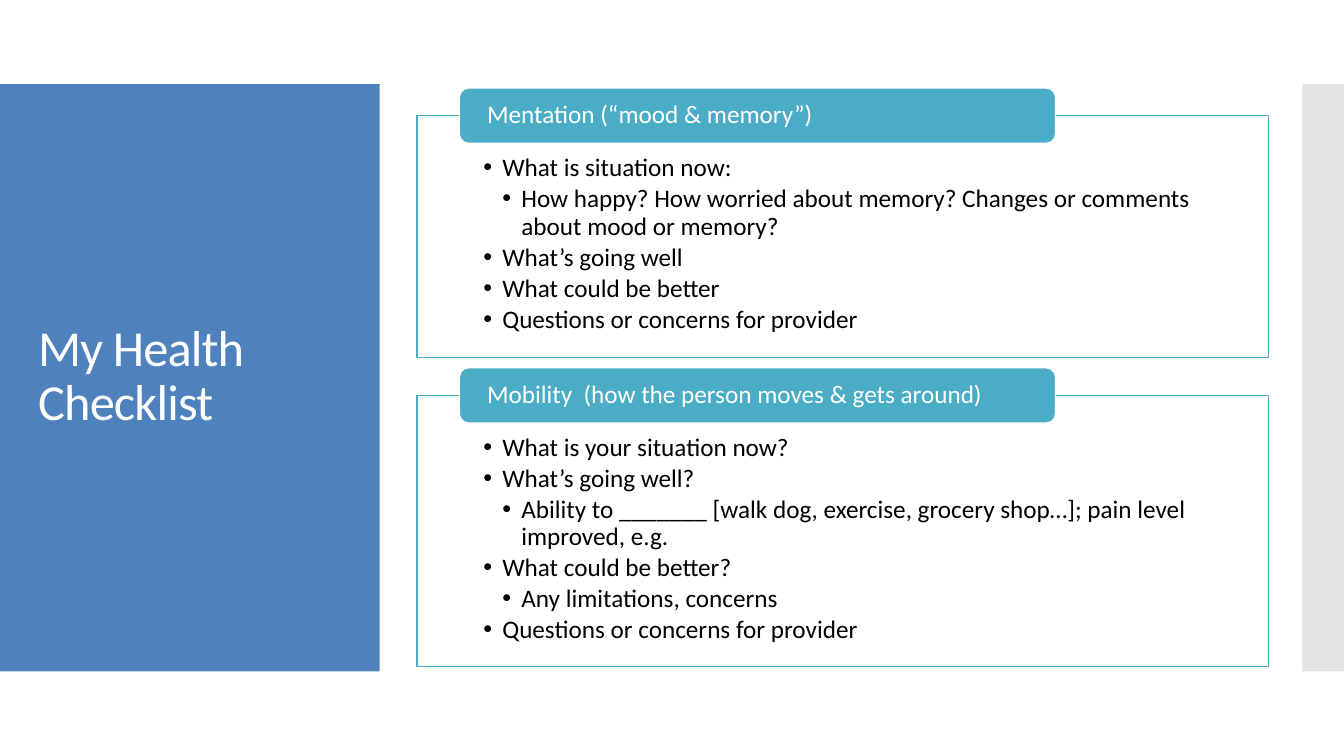
import pptx
import pptx.util
import pptx.dml.color
import pptx.enum.shapes
import pptx.enum.text
import pptx.oxml.ns
from lxml import etree

Cm = pptx.util.Cm
Pt = pptx.util.Pt
Shape = pptx.enum.shapes.MSO_SHAPE
Anchor = pptx.enum.text.MSO_ANCHOR
qn = pptx.oxml.ns.qn

COLORS = {"blue": "4F81BD", "teal": "4BACC6", "gray": "C8C8C8",
          "white": "FFFFFF", "black": "000000"}
INDENT = 0.48

CARDS = [
    ("Mentation (“mood & memory”)", 6.1, [
        (1, "What is situation now:"),
        (2, "How happy? How worried about memory? "
            "Changes or comments about mood or memory?"),
        (1, "What’s going well"),
        (1, "What could be better"),
        (1, "Questions or concerns for provider"),
    ]),
    ("Mobility  (how the person moves & gets around)", 6.83, [
        (1, "What is your situation now?"),
        (1, "What’s going well?"),
        (2, "Ability to _______ [walk dog, exercise, grocery shop…]; "
            "pain level improved, e.g."),
        (1, "What could be better?"),
        (2, "Any limitations, concerns"),
        (1, "Questions or concerns for provider"),
    ]),
]


def color(name):
    return pptx.dml.color.RGBColor.from_string(COLORS[name])


def write(para, text, size=18, ink="black", after=0, level=0, track=None):
    para.alignment = pptx.enum.text.PP_ALIGN.LEFT
    para.line_spacing = 0.9
    para.space_after = Pt(after)
    run = para.add_run()
    run.text = text
    run.font.name = "Calibri"
    run.font.size = Pt(size)
    run.font.color.rgb = color(ink)
    if track:
        run.font._element.set("spc", str(track))
    if level:
        para.level = level
        props = para._p.get_or_add_pPr()
        props.set("marL", str(Cm(INDENT * level)))
        props.set("indent", str(-Cm(INDENT)))
        etree.SubElement(props, qn("a:buFont")).set("typeface", "Arial")
        etree.SubElement(props, qn("a:buChar")).set("char", "•")


class Deck:
    """Holds the slide and draws its parts in one style."""

    def __init__(self):
        self.file = pptx.Presentation()
        self.file.slide_width = Cm(33.87)
        self.file.slide_height = Cm(19.05)
        self.slide = self.file.slides.add_slide(self.file.slide_layouts[6])

    def box(self, kind, place, fill, line=None, alpha=None):
        shape = self.slide.shapes.add_shape(kind, *map(Cm, place))
        shape.shadow.inherit = False
        shape.fill.solid()
        shape.fill.fore_color.rgb = color(fill)
        if alpha:
            tint = shape.fill._xPr.find(".//" + qn("a:srgbClr"))
            etree.SubElement(tint, qn("a:alpha")).set("val", str(alpha * 1000))
        if line:
            shape.line.color.rgb = color(line)
            shape.line.width = Pt(0.85)
        else:
            shape.line.fill.background()
        return shape

    def frame(self, shape, anchor, side, top=0, base=0):
        frame = shape.text_frame
        frame.word_wrap = True
        frame.vertical_anchor = anchor
        frame.margin_left = frame.margin_right = Cm(side)
        frame.margin_top = Cm(top)
        frame.margin_bottom = Cm(base)
        return frame

    def title(self, text, place):
        shape = self.slide.shapes.add_textbox(*map(Cm, place))
        frame = self.frame(shape, Anchor.MIDDLE, 0.25, 0.13, 0.13)
        write(frame.paragraphs[0], text, size=36, ink="white", track=-60)

    def card(self, head, items, top, height):
        panel = self.box(Shape.RECTANGLE, (10.51, top, 21.46, height),
                         "white", "teal", alpha=90)
        frame = self.frame(panel, Anchor.TOP, 1.67, 0.99, 0.36)
        for index, (level, text) in enumerate(items):
            para = frame.add_paragraph() if index else frame.paragraphs[0]
            write(para, text, after=2.7, level=level)
        label = self.box(Shape.ROUNDED_RECTANGLE,
                         (11.58, top - 0.7, 15.02, 1.39), "teal", "white")
        frame = self.frame(label, Anchor.MIDDLE, 0.63)
        write(frame.paragraphs[0], head, ink="white")


def main():
    deck = Deck()
    deck.box(Shape.RECTANGLE, (0, 2.12, 9.57, 14.8), "blue")
    deck.box(Shape.RECTANGLE, (32.82, 2.12, 1.05, 14.8), "gray", alpha=50)
    deck.title("My Health Checklist", (0.71, 3.12, 8.18, 12.78))
    top, gap = 2.92, 0.95
    for head, height, items in CARDS:
        deck.card(head, items, top, height)
        top += height + gap
    deck.file.save("out.pptx")


if __name__ == "__main__":
    main()
